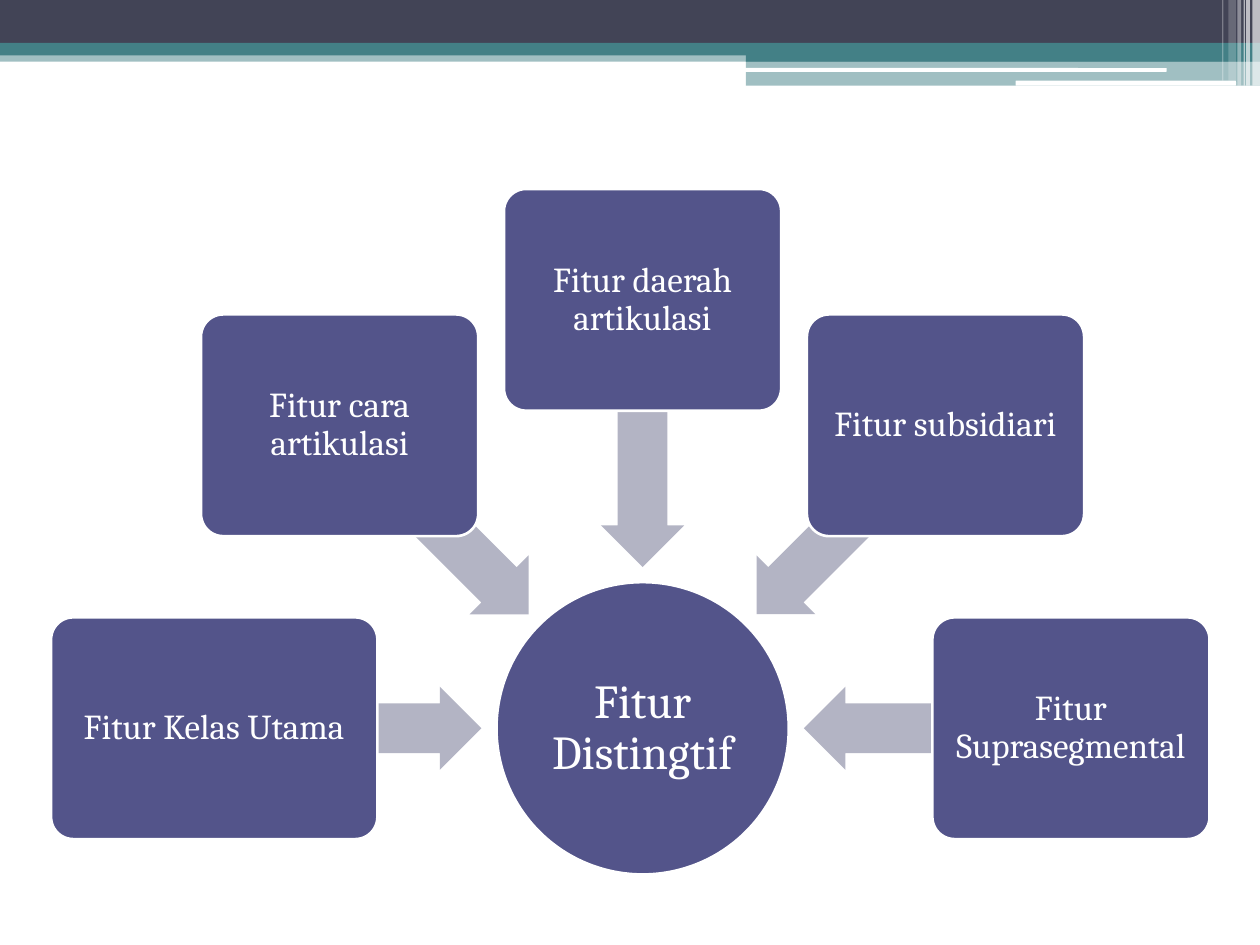
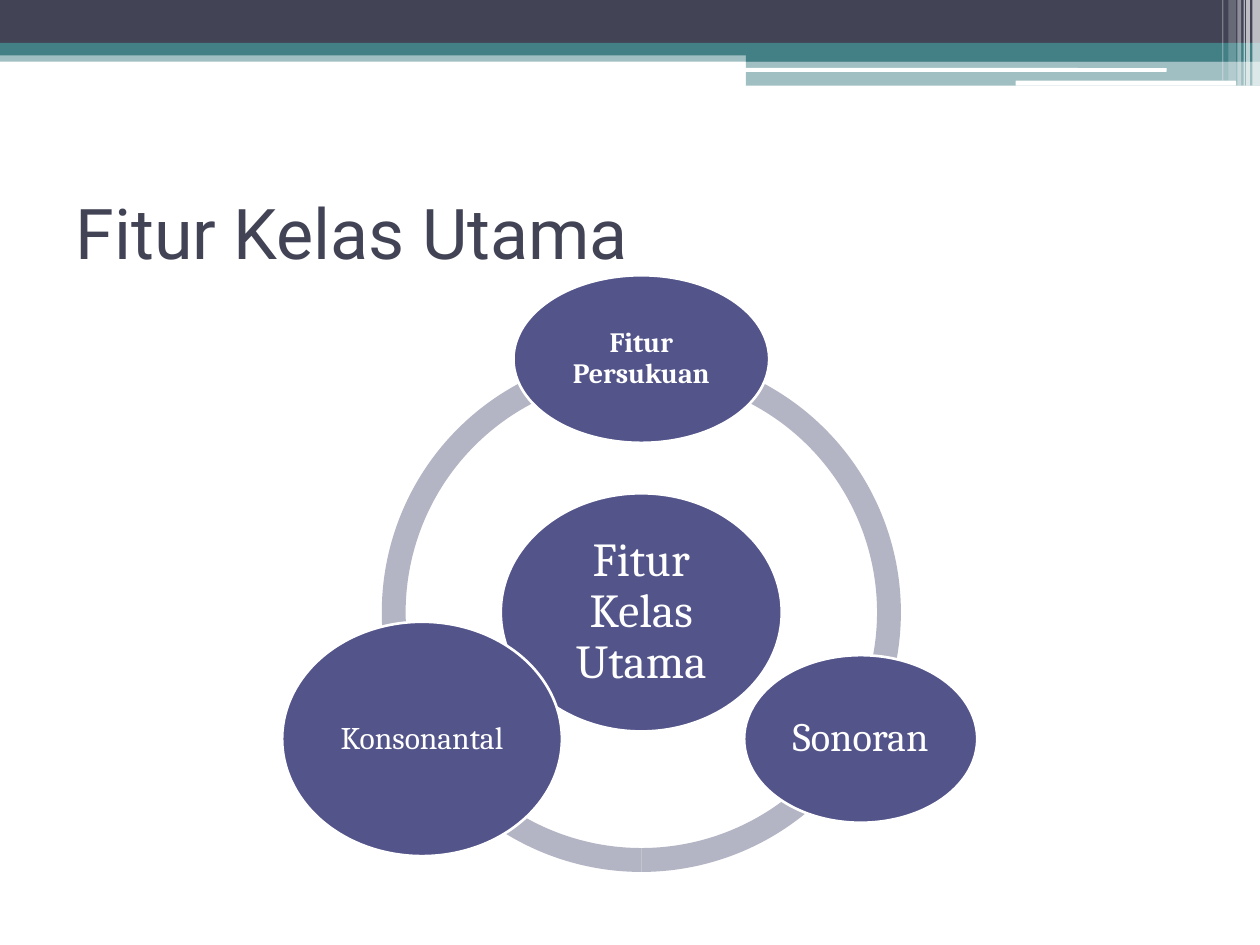
import math
from dataclasses import dataclass

import lxml.etree
import pptx
import pptx.dml.color
import pptx.enum.shapes
import pptx.enum.text
import pptx.oxml.ns
import pptx.util

Inches = pptx.util.Inches
KIND = pptx.enum.shapes.MSO_SHAPE
ALIGN = pptx.enum.text.PP_ALIGN
MIDDLE = pptx.enum.text.MSO_ANCHOR.MIDDLE


@dataclass(frozen=True)
class Theme:
    white: str = "FFFFFF"
    dark: str = "424456"
    teal: str = "438086"
    indigo: str = "53548A"
    pale: str = "B3B4C4"
    body_font: str = "Cambria"
    title_font: str = "Roboto"
    title_size: int = 40
    hub_size: int = 27
    feature_size: int = 20
    outline: float = 1.5


THEME = Theme()

FEATURE_HUB = "Fitur Distingtif"
FEATURES = [
    ("Fitur Kelas Utama", 2.59),
    ("Fitur cara artikulasi", 2.2),
    ("Fitur daerah artikulasi", 2.2),
    ("Fitur subsidiari", 2.2),
    ("Fitur Suprasegmental", 2.2),
]

MAIN_CLASS = "Fitur Kelas Utama"
CLASS_MEMBERS = [
    ("Fitur Persukuan", (2.03, 1.33), 16, True),
    ("Sonoran", (1.85, 1.33), 23, False),
    ("Konsonantal", (2.22, 1.86), 18, False),
]

BANDS = [
    ((0, 0.4, 10, 0.09), THEME.teal, 50),
    ((0, 0, 10, 0.34), THEME.dark, 100),
    ((0, 0.34, 10, 0.1), THEME.teal, 100),
    ((5.92, 0.39, 4.08, 0.1), THEME.teal, 100),
    ((5.92, 0.48, 4.08, 0.2), THEME.teal, 50),
]
HIGHLIGHTS = [(5.91, 0.54, 3.35, 0.03), (8.06, 0.64, 1.75, 0.04)]
STRIPES = [
    (9.94, 0.06, 0.68, 65),
    (9.89, 0.03, 0.68, 65),
    (9.87, 0.01, 0.68, 60),
    (9.82, 0.03, 0.68, 40),
    (9.75, 0.06, 0.64, 20),
    (9.7, 0.01, 0.64, 30),
]


def rgb(color):
    return pptx.dml.color.RGBColor.from_string(color)


def add_filled(slide, kind, box, color, opacity=100, adjustments=()):
    shape = slide.shapes.add_shape(kind, *map(Inches, box))
    shape.shadow.inherit = False
    shape.fill.solid()
    shape.fill.fore_color.rgb = rgb(color)
    shape.line.fill.background()
    for index, value in enumerate(adjustments):
        shape.adjustments[index] = value
    if opacity < 100:
        qn = pptx.oxml.ns.qn
        tint = shape._element.spPr.find(qn("a:solidFill")).find(qn("a:srgbClr"))
        lxml.etree.SubElement(tint, qn("a:alpha")).set("val", str(opacity * 1000))
    return shape


def write(frame, text, font, size, color, align, bold=False):
    frame.word_wrap = True
    frame.vertical_anchor = MIDDLE
    paragraph = frame.paragraphs[0]
    paragraph.alignment = align
    run = paragraph.add_run()
    run.text = text
    run.font.name = font
    run.font.size = pptx.util.Pt(size)
    run.font.bold = bold
    run.font.color.rgb = rgb(color)
    return paragraph


def centred(center, size):
    return (center[0] - size[0] / 2, center[1] - size[1] / 2, *size)


def around(center, radius, degrees):
    angle = math.radians(degrees)
    return center[0] + radius * math.cos(angle), center[1] + radius * math.sin(angle)


def add_node(slide, kind, center, size, text, text_size, bold=False, inset=0.03, adjustments=()):
    node = add_filled(slide, kind, centred(center, size), THEME.indigo, adjustments=adjustments)
    node.line.color.rgb = rgb(THEME.white)
    node.line.width = pptx.util.Pt(THEME.outline)
    frame = node.text_frame
    frame.margin_left = frame.margin_right = Inches(inset)
    frame.margin_top = frame.margin_bottom = Inches(inset)
    paragraph = write(frame, text, THEME.body_font, text_size, THEME.white, ALIGN.CENTER, bold)
    paragraph.line_spacing = 0.9


def decorate_master(prs, slide):
    parts = [add_filled(slide, KIND.RECTANGLE, *band) for band in BANDS]
    parts += [add_filled(slide, KIND.ROUNDED_RECTANGLE, box, THEME.white) for box in HIGHLIGHTS]
    parts += [
        add_filled(slide, KIND.RECTANGLE, (left, 0, width, height), THEME.white, opacity)
        for left, width, height, opacity in STRIPES
    ]
    for part in parts:
        prs.slide_master.shapes._spTree.append(part._element)


def build_features(slide):
    hub = (5.1, 5.78)
    add_node(slide, KIND.OVAL, hub, (2.32, 2.32), FEATURE_HUB, THEME.hub_size, inset=0.02)
    step = 180 / (len(FEATURES) - 1)
    for index, (feature, width) in enumerate(FEATURES):
        degrees = 180 + index * step
        arrow_box = centred(around(hub, 2.34, degrees), (2.12, 0.66))
        arrow = add_filled(slide, KIND.LEFT_ARROW, arrow_box, THEME.pale, adjustments=(0.6, 0.5))
        arrow.rotation = degrees % 360
        add_node(slide, KIND.ROUNDED_RECTANGLE, around(hub, 3.4, degrees), (width, 1.76),
                 feature, THEME.feature_size, inset=0.04, adjustments=(0.1,))


def build_main_class(slide):
    title = slide.shapes.title
    title.left, title.top, title.width, title.height = map(Inches, (0.5, 1.25, 9, 1.17))
    write(title.text_frame, MAIN_CLASS, THEME.title_font, THEME.title_size, THEME.dark, ALIGN.LEFT)

    hub = (5.09, 4.86)
    for start, end in ((90, 162), (18, 90), (162, 18)):
        add_filled(slide, KIND.BLOCK_ARC, centred(hub, (4.12, 4.12)), THEME.pale,
                   adjustments=(start * 0.6, end * 0.6, 0.046))
    add_node(slide, KIND.OVAL, hub, (2.23, 1.89), MAIN_CLASS, THEME.hub_size, inset=0.04)
    step = 360 / len(CLASS_MEMBERS)
    for index, (member, size, text_size, bold) in enumerate(CLASS_MEMBERS):
        add_node(slide, KIND.OVAL, around(hub, 2.01, index * step - 90), size,
                 member, text_size, bold)


def main():
    prs = pptx.Presentation()
    prs.slide_width, prs.slide_height = Inches(10), Inches(7.5)
    title_only, blank = prs.slide_layouts[5], prs.slide_layouts[6]
    features = prs.slides.add_slide(blank)
    decorate_master(prs, features)
    build_features(features)
    build_main_class(prs.slides.add_slide(title_only))
    prs.save("out.pptx")


if __name__ == "__main__":
    main()
